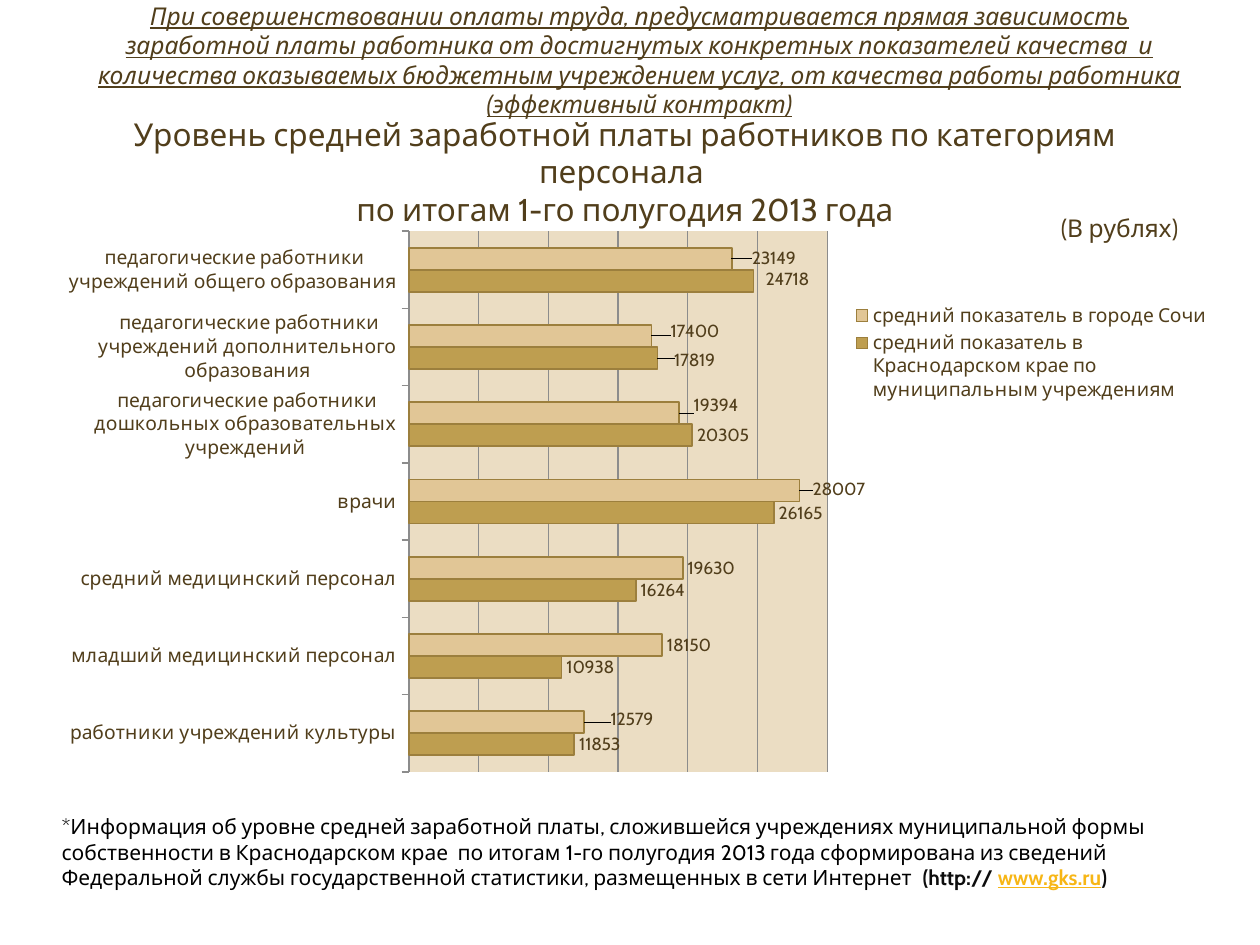
from lxml import etree
from pptx import Presentation
from pptx.chart.data import CategoryChartData
from pptx.dml.color import RGBColor
from pptx.enum.chart import XL_CHART_TYPE, XL_LABEL_POSITION, XL_LEGEND_POSITION, XL_TICK_MARK
from pptx.enum.text import MSO_ANCHOR, MSO_AUTO_SIZE, PP_ALIGN
from pptx.oxml import parse_xml
from pptx.oxml.ns import nsdecls, qn
from pptx.util import Inches, Pt

BAR = XL_CHART_TYPE.BAR_CLUSTERED
OUTSIDE = XL_LABEL_POSITION.OUTSIDE_END
LEGEND_RIGHT = XL_LEGEND_POSITION.RIGHT
NO_TICK, TICK_OUT = XL_TICK_MARK.NONE, XL_TICK_MARK.OUTSIDE
LEFT, CENTER, RIGHT = PP_ALIGN.LEFT, PP_ALIGN.CENTER, PP_ALIGN.RIGHT
TOP, MIDDLE = MSO_ANCHOR.TOP, MSO_ANCHOR.MIDDLE
NO_FIT = MSO_AUTO_SIZE.NONE

FONT, BROWN, GREY, GOLD = "Cabin", "513E1B", "8C8C8C", "9C7F3D"

CATEGORIES = [
    "работники учреждений культуры",
    "младший медицинский персонал",
    "средний медицинский персонал",
    "врачи",
    " педагогические работники дошкольных образовательных учреждений",
    " педагогические работники учреждений дополнительного образования",
    " педагогические работники учреждений общего образования",
]
# Name, fill, values, label shifts by point as fractions of the chart
SERIES = [
    ("средний показатель в Краснодарском крае по муниципальным учреждениям", "BE9E50",
     [11853, 10938, 16264, 26165, 20305, 17819, 24718],
     {5: (0.01, 0.003), 6: (0.006, -0.003)}),
    ("средний показатель в городе Сочи", "E1C696",
     [12579, 18150, 19630, 28007, 19394, 17400, 23149],
     {0: (0.018, -0.005), 3: (0.007, -0.002), 4: (0.008, -0.014),
      5: (0.012, -0.009), 6: (0.013, -0.002)}),
]


def rgb(value):
    return RGBColor.from_string(value)


def style_font(font, size, color=BROWN, bold=False, italic=False, underline=False):
    font.name, font.size = FONT, Pt(size)
    font.bold, font.italic, font.underline = bold, italic, underline
    font.color.rgb = rgb(color)


def add_run(p, text, **fmt):
    r = p.add_run()
    r.text = text
    style_font(r.font, **fmt)


def write(sp, box, paragraphs, align=LEFT, anchor=TOP, **fmt):
    """Each paragraph is a list of (text, format changes)."""
    sp.left, sp.top, sp.width, sp.height = (Inches(v) for v in box)
    tf = sp.text_frame
    tf.word_wrap, tf.auto_size, tf.vertical_anchor = True, NO_FIT, anchor
    for i, runs in enumerate(paragraphs):
        p = tf.add_paragraph() if i else tf.paragraphs[0]
        p.alignment, p.line_spacing = align, 1.0
        p.space_before = Pt(0)
        for text, changes in runs:
            add_run(p, text, **{**fmt, **changes})


def add_text(slide, box, paragraphs, **fmt):
    sp = slide.shapes.add_textbox(*(Inches(v) for v in box))
    write(sp, box, paragraphs, **fmt)


def layout_xml(inner=False, **values):
    layout = parse_xml(f"<c:layout {nsdecls('c')}><c:manualLayout/></c:layout>")
    settings = [("layoutTarget", "inner")] if inner else []
    if "w" in values:
        settings += [("xMode", "edge"), ("yMode", "edge")]
    for tag, val in settings + list(values.items()):
        etree.SubElement(layout[0], qn(f"c:{tag}")).set("val", str(val))
    return layout


def set_layout(parent, after, layout):
    """Replace the layout of a chart part, keeping the schema order."""
    for old in parent.findall(qn("c:layout")):
        parent.remove(old)
    if after is None:
        parent.insert(0, layout)
    else:
        parent.find(qn(after)).addnext(layout)


def format_series(s, color, shifts):
    s.format.fill.solid()
    s.format.fill.fore_color.rgb = rgb(color)
    s.format.line.color.rgb = rgb(GOLD)
    s.format.line.width = Pt(1)
    labels = s.data_labels
    labels.show_value, labels.position = True, OUTSIDE
    style_font(labels.font, 10)
    for i, (dx, dy) in shifts.items():
        label = s.points[i].data_label
        label.position = OUTSIDE
        style_font(label.font, 10)
        d_lbl = s._element.xpath(f"c:dLbls/c:dLbl[c:idx/@val='{i}']")[0]
        set_layout(d_lbl, "c:idx", layout_xml(x=dx, y=dy))


def add_wage_chart(slide, box):
    data = CategoryChartData()
    data.categories = CATEGORIES
    for name, _, values, _ in SERIES:
        data.add_series(name, values)
    chart = slide.shapes.add_chart(BAR, *(Inches(v) for v in box), data).chart
    chart.has_title = False
    style_font(chart.font, 11)

    # Axes
    cat, val = chart.category_axis, chart.value_axis
    cat.major_tick_mark, cat.minor_tick_mark = TICK_OUT, NO_TICK
    style_font(cat.tick_labels.font, 11)
    val.minimum_scale, val.maximum_scale, val.major_unit = 0, 30000, 5000
    val.has_major_gridlines, val.visible = True, False
    for line in (cat.format.line, val.major_gridlines.format.line):
        line.color.rgb = rgb(GREY)
        line.width = Pt(0.75)

    # Bars and labels
    plot = chart.plots[0]
    plot.gap_width, plot.overlap, plot.vary_by_categories = 150, 0, False
    for s, (_, color, _, shifts) in zip(plot.series, SERIES):
        format_series(s, color, shifts)

    # Plot area
    area = chart._chartSpace.chart.plotArea
    set_layout(area, None, layout_xml(inner=True, x=0.313, y=0.042, w=0.354, h=0.925))
    area.append(parse_xml(
        f"<c:spPr {nsdecls('c', 'a')}><a:solidFill><a:srgbClr val='EBDDC3'/>"
        "</a:solidFill></c:spPr>"))

    # Legend
    chart.has_legend = True
    legend = chart.legend
    legend.position, legend.include_in_layout = LEGEND_RIGHT, False
    style_font(legend.font, 11)
    set_layout(legend._element, "c:legendPos", layout_xml(x=0.685, y=0.16, w=0.31, h=0.18))


def add_heading(slide, box):
    text = ("При совершенствовании оплаты труда, предусматривается прямая зависимость "
            "заработной платы работника от достигнутых конкретных показателей качества  и "
            "количества оказываемых бюджетным учреждением услуг, от качества работы "
            "работника (эффективный контракт)")
    write(slide.shapes.title, box, [[(text, {})]], align=CENTER, anchor=MIDDLE,
          size=14, italic=True, underline=True)


def add_footnote(slide, box):
    text = ("*Информация об уровне средней заработной платы, сложившейся учреждениях "
            "муниципальной формы собственности в Краснодарском крае  по итогам 1-го "
            "полугодия 2013 года сформирована из сведений Федеральной службы "
            "государственной статистики, размещенных в сети Интернет  ")
    dark = {"color": "0D0D0D", "bold": True}
    link = {"color": "F7B615", "bold": True, "underline": True}
    runs = [(text, {}), ("(http:// ", dark), ("www.gks.ru", link), (")", dark)]
    add_text(slide, box, [runs], size=12, color="000000")


def main():
    prs = Presentation()
    prs.slide_width, prs.slide_height = Inches(10), Inches(7.5)
    slide = prs.slides.add_slide(prs.slide_layouts[5])
    add_wage_chart(slide, (0.31, 1.64, 9.38, 4.64))
    add_text(slide, (0.47, 0.86, 8.98, 0.71),
             [[("Уровень средней заработной платы работников по категориям персонала ", {})],
              [("по итогам 1-го полугодия 2013 года", {})]], align=CENTER, size=18)
    add_footnote(slide, (0.39, 6.41, 9.22, 0.71))
    add_text(slide, (7.89, 1.64, 1.56, 0.57), [[("(В рублях)", {})]], align=RIGHT, size=14)
    add_heading(slide, (0.62, 0.16, 8.91, 0.63))
    prs.save("out.pptx")


if __name__ == "__main__":
    main()
